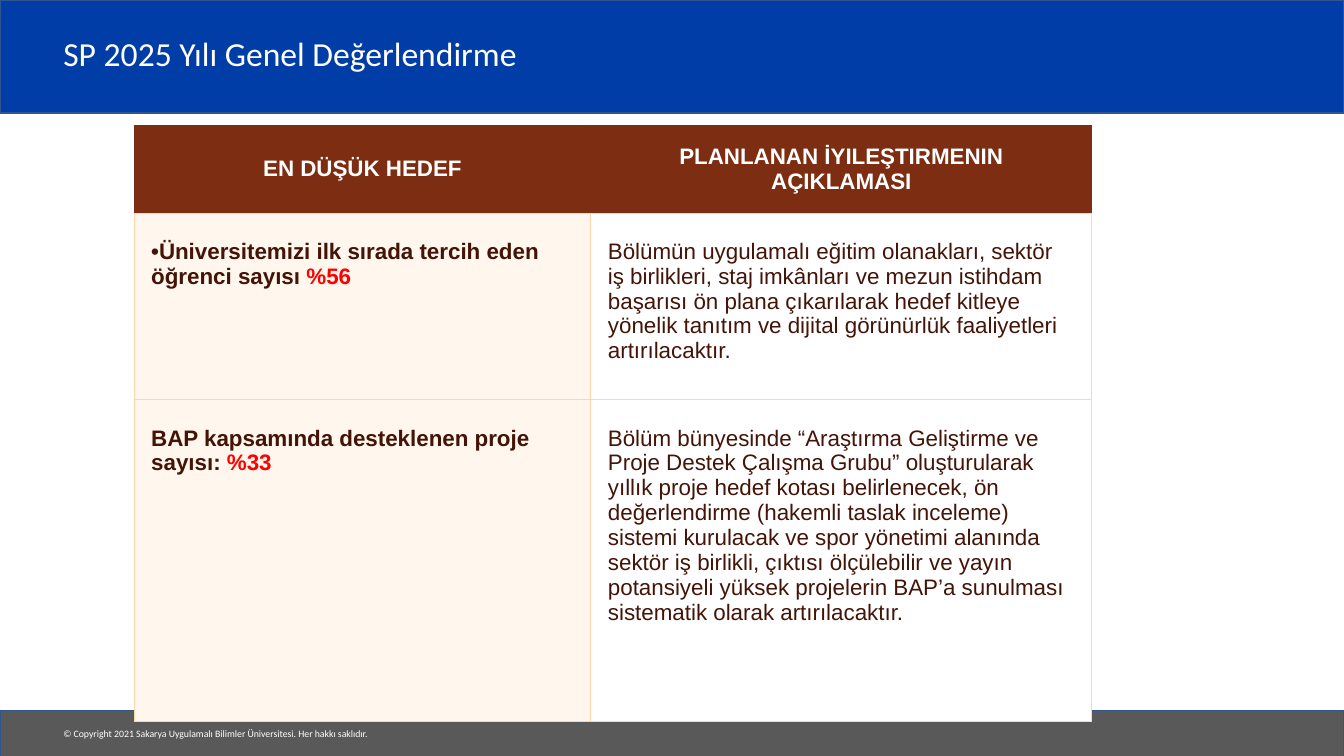
from pptx import Presentation
from pptx.dml.color import RGBColor
from pptx.enum.shapes import MSO_SHAPE
from pptx.enum.text import MSO_ANCHOR, PP_ALIGN
from pptx.oxml import parse_xml
from pptx.oxml.ns import nsdecls
from pptx.util import Inches, Pt

# Content
TITLE = "SP 2025 Yılı Genel Değerlendirme"
COPYRIGHT = "© Copyright 2021 Sakarya Uygulamalı Bilimler Üniversitesi. Her hakkı saklıdır."
HEADERS = ["EN DÜŞÜK HEDEF", "PLANLANAN İYILEŞTIRMENIN AÇIKLAMASI"]
GOALS = [  # goal, rate, planned improvement
    ("•Üniversitemizi ilk sırada tercih eden öğrenci sayısı ", "%56",
     "Bölümün uygulamalı eğitim olanakları, sektör iş birlikleri, staj imkânları "
     "ve mezun istihdam başarısı ön plana çıkarılarak hedef kitleye yönelik "
     "tanıtım ve dijital görünürlük faaliyetleri artırılacaktır."),
    ("BAP kapsamında desteklenen proje sayısı: ", "%33",
     "Bölüm bünyesinde “Araştırma Geliştirme ve Proje Destek Çalışma Grubu” "
     "oluşturularak yıllık proje hedef kotası belirlenecek, ön değerlendirme "
     "(hakemli taslak inceleme) sistemi kurulacak ve spor yönetimi alanında "
     "sektör iş birlikli, çıktısı ölçülebilir ve yayın potansiyeli yüksek "
     "projelerin BAP’a sunulması sistematik olarak artırılacaktır."),
]

# Theme and layout, in inches
THEME = {
    "band": "003DA6", "footer": "595959", "band_line": "31538F",
    "header": "7C2D12", "goal": "FFF7ED", "plan": "FFFFFF", "grid": "FED7AA",
    "light": "FFFFFF", "dark": "431407", "rate": "FF0000",
    "title_size": 24, "table_size": 16, "copyright_size": 7,
    "slide_font": "Calibri", "table_font": "Arial",
}
SLIDE_W, SLIDE_H = 13.33, 7.5
BANDS = [("band", 0, 1.12), ("footer", 7.05, 0.46)]
TABLE_LEFT, TABLE_TOP = 1.33, 1.24
COL_WIDTHS = [4.53, 4.97]
ROW_HEIGHTS = [0.73, 1.83, 3.19]
PAD, BODY_PAD = 0.17, 0.26


def rgb(name):
    return RGBColor.from_string(THEME[name])


def add_run(p, text, font, size, color, bold=False):
    r = p.add_run()
    r.text = text
    formats = {"name": THEME[font], "size": Pt(THEME[size]), "bold": bold}
    for key, value in formats.items():
        setattr(r.font, key, value)
    r.font.color.rgb = rgb(color)


def add_label(slide, box, text, size, anchor, spacing):
    tf = slide.shapes.add_textbox(*map(Inches, box)).text_frame
    tf.word_wrap = True
    tf.vertical_anchor = anchor
    p = tf.paragraphs[0]
    p.line_spacing = spacing
    add_run(p, text, "slide_font", size, "light")


def set_borders(cell, colors):
    tc_pr = cell._tc.get_or_add_tcPr()
    for i, (side, color) in enumerate(zip("LRTB", colors)):
        tc_pr.insert(i, parse_xml(
            f'<a:ln{side} {nsdecls("a")} w="{Pt(0.75)}"><a:solidFill>'
            f'<a:srgbClr val="{THEME[color]}"/></a:solidFill></a:ln{side}>'))


def fill_cell(cell, runs, fill, pad, anchor, align, borders):
    formats = {"margin_left": Inches(PAD), "margin_right": Inches(PAD),
               "margin_top": Inches(pad), "margin_bottom": Inches(pad),
               "vertical_anchor": anchor}
    for key, value in formats.items():
        setattr(cell, key, value)
    cell.fill.solid()
    cell.fill.fore_color.rgb = rgb(fill)
    set_borders(cell, borders)
    p = cell.text_frame.paragraphs[0]
    p.alignment = align
    for text, color, bold in runs:
        add_run(p, text, "table_font", "table_size", color, bold)


def add_goal_table(slide):
    table = slide.shapes.add_table(
        len(ROW_HEIGHTS), len(COL_WIDTHS), Inches(TABLE_LEFT), Inches(TABLE_TOP),
        Inches(sum(COL_WIDTHS)), Inches(sum(ROW_HEIGHTS))).table
    table.horz_banding = False
    for col, width in zip(table.columns, COL_WIDTHS):
        col.width = Inches(width)
    for row, height in zip(table.rows, ROW_HEIGHTS):
        row.height = Inches(height)

    # Header row
    for c, text in enumerate(HEADERS):
        fill_cell(table.cell(0, c), [(text, "light", True)], "header", PAD,
                  MSO_ANCHOR.MIDDLE, PP_ALIGN.CENTER, ["header"] * 3 + ["grid"])

    # Goal rows
    for r, (goal, rate, plan) in enumerate(GOALS, start=1):
        columns = [("goal", [(goal, "dark", True), (rate, "rate", True)]),
                   ("plan", [(plan, "dark", False)])]
        for c, (fill, runs) in enumerate(columns):
            fill_cell(table.cell(r, c), runs, fill, BODY_PAD,
                      MSO_ANCHOR.TOP, PP_ALIGN.LEFT, ["grid"] * 4)


def main():
    prs = Presentation()
    prs.slide_width, prs.slide_height = Inches(SLIDE_W), Inches(SLIDE_H)
    slide = prs.slides.add_slide(prs.slide_layouts[6])

    # Top and bottom bands
    for color, top, height in BANDS:
        s = slide.shapes.add_shape(MSO_SHAPE.RECTANGLE, 0, Inches(top),
                                   Inches(SLIDE_W), Inches(height))
        s.shadow.inherit = False
        s.fill.solid()
        s.fill.fore_color.rgb = rgb(color)
        s.line.color.rgb = rgb("band_line")
        s.line.width = Pt(1)

    # Title, copyright line and table
    add_label(slide, (0.53, 7.17, 3.29, 0.22), COPYRIGHT, "copyright_size",
              MSO_ANCHOR.TOP, 1.0)
    add_label(slide, (0.53, 0.19, 11.03, 0.73), TITLE, "title_size",
              MSO_ANCHOR.MIDDLE, 0.9)
    add_goal_table(slide)
    prs.save("out.pptx")


if __name__ == "__main__":
    main()
